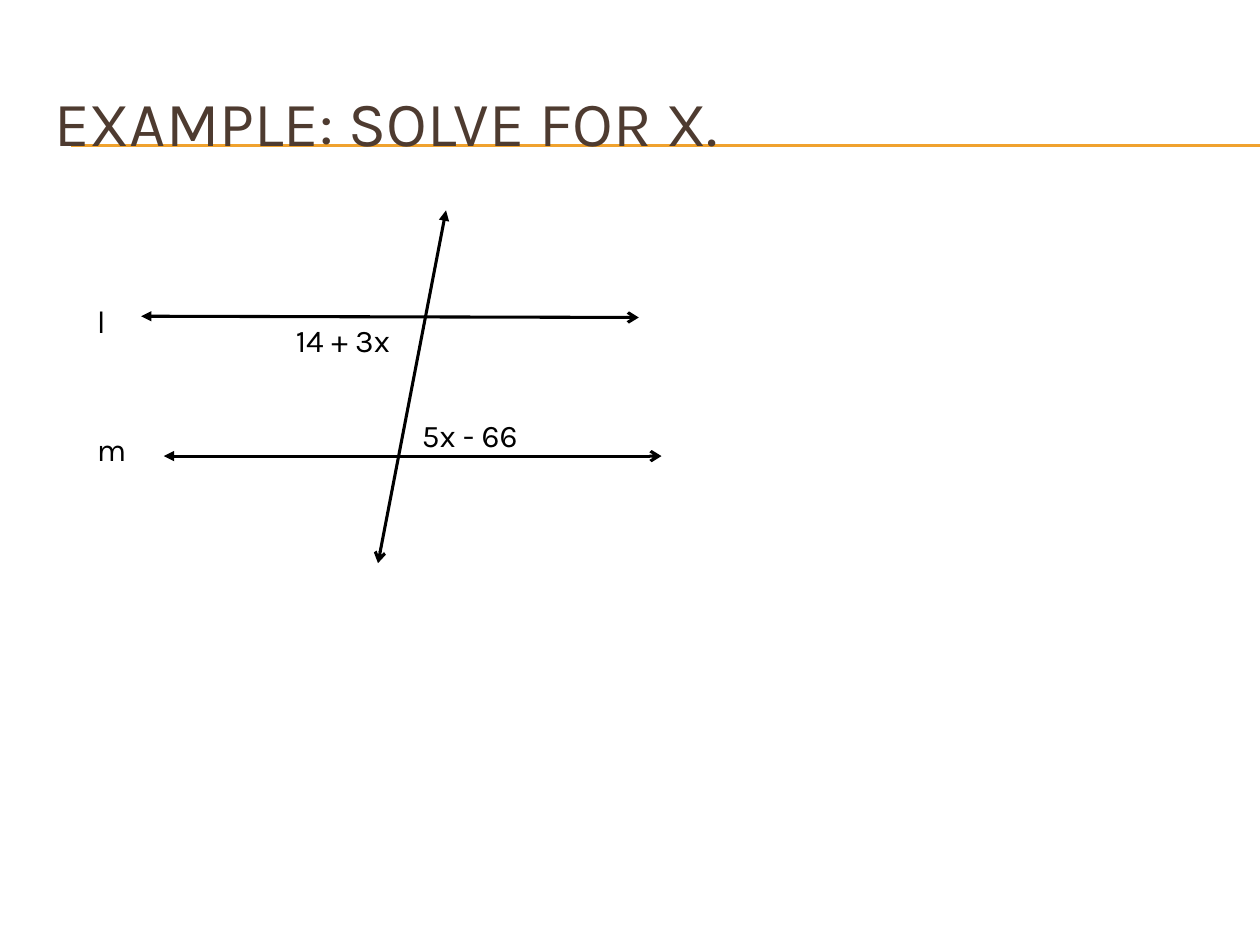
from dataclasses import dataclass

from lxml import etree
from pptx import Presentation
from pptx import util as u
from pptx.dml.color import RGBColor
from pptx.enum import shapes, text
from pptx.oxml.ns import qn

BLACK = RGBColor(0x00, 0x00, 0x00)
BROWN = RGBColor(0x4E, 0x3B, 0x30)
AMBER = RGBColor(0xF0, 0xA2, 0x2E)
FONT = "Karla"
COLUMNS, ROWS = 100, 75
CELL = u.Inches(0.1)


@dataclass(frozen=True)
class Line:
    start: tuple[float, float]
    end: tuple[float, float]
    color: RGBColor = BLACK
    weight: float = 1.75
    arrows: bool = True


@dataclass(frozen=True)
class Label:
    wording: str
    column: float
    row: float
    columns: float
    rows: float = 4.2


RULES = [Line((5.6, row), (COLUMNS, row), AMBER, 0.75, False) for row in (11.5, 11.6)]
TRANSVERSAL = Line((35.4, 16.7), (30, 44.7))
PARALLELS = [Line((11.2, 25.1), (50.7, 25.2)), Line((13, 36.2), (52.5, 36.2))]
LINE_NAMES = [Label("l", 6.7, 23.5, 7.2), Label("m", 6.7, 33.6, 7.2)]
ANGLES = [Label("14 + 3x", 22.5, 25, 11.7, 4), Label("5x - 66", 32.5, 32.5, 10.8)]


def grid(cells: float) -> int:
    return round(cells * CELL)


def style_font(font, size: float, color: RGBColor) -> None:
    font.name = FONT
    font.size = u.Pt(size)
    font.color.rgb = color


def draw_line(container, line: Line) -> None:
    connector = container.add_connector(
        shapes.MSO_CONNECTOR.STRAIGHT, *map(grid, line.start + line.end)
    )
    connector.line.color.rgb = line.color
    connector.line.width = u.Pt(line.weight)
    properties = connector.element.spPr
    if line.arrows:
        outline = properties.find(qn("a:ln"))
        for tag, kind in (("a:headEnd", "triangle"), ("a:tailEnd", "arrow")):
            etree.SubElement(outline, qn(tag), type=kind)
    etree.SubElement(properties, qn("a:effectLst"))


def draw_label(container, label: Label) -> None:
    box = container.add_textbox(
        *map(grid, (label.column, label.row, label.columns, label.rows))
    )
    frame = box.text_frame
    frame.word_wrap = True
    frame.auto_size = text.MSO_AUTO_SIZE.SHAPE_TO_FIT_TEXT
    frame.text = label.wording
    style_font(frame.paragraphs[0].font, 18, BLACK)


def place_title(title, wording: str) -> None:
    title.left, title.top, title.width, title.height = map(grid, (3.3, 5, 95, 9.2))
    frame = title.text_frame
    frame.text = wording
    frame.word_wrap = True
    frame.auto_size = text.MSO_AUTO_SIZE.NONE
    frame.vertical_anchor = text.MSO_ANCHOR.MIDDLE
    paragraph = frame.paragraphs[0]
    paragraph.alignment = text.PP_ALIGN.LEFT
    style_font(paragraph.font, 36, BROWN)


def main() -> None:
    presentation = Presentation()
    presentation.slide_width = grid(COLUMNS)
    presentation.slide_height = grid(ROWS)
    slide = presentation.slides.add_slide(presentation.slide_layouts.get_by_name("Title Only"))
    title = slide.shapes.title
    for rule in RULES:
        draw_line(slide.shapes, rule)
    title.element.getparent().append(title.element)
    place_title(title, "EXAMPLE: SOLVE FOR X.")

    diagram = slide.shapes.add_group_shape().shapes
    for line in [TRANSVERSAL, *PARALLELS]:
        draw_line(diagram, line)
    for label in LINE_NAMES:
        draw_label(diagram, label)
    for label in ANGLES:
        draw_label(slide.shapes, label)
    presentation.save("out.pptx")


if __name__ == "__main__":
    main()
